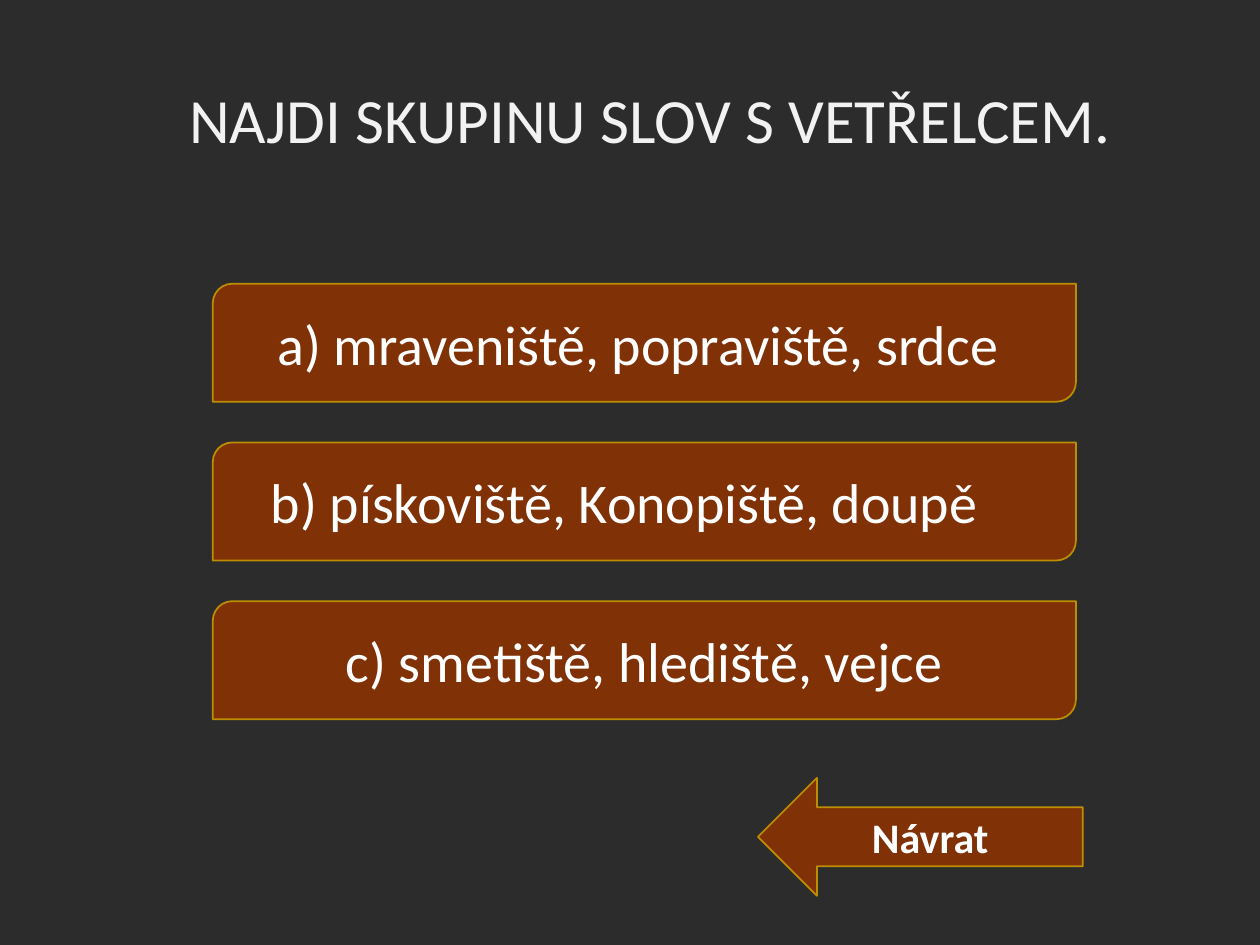
from pptx import Presentation
from pptx.dml.color import RGBColor
from pptx.enum.shapes import MSO_SHAPE
from pptx.enum.text import MSO_ANCHOR, PP_ALIGN
from pptx.util import Cm, Pt

CARD = MSO_SHAPE.ROUND_2_DIAG_RECTANGLE
ARROW = MSO_SHAPE.LEFT_ARROW
MIDDLE = MSO_ANCHOR.MIDDLE
CENTER = PP_ALIGN.CENTER

FONT = "Calibri"
COLORS = {
    "background": "2C2C2C",
    "title": "F2F2F2",
    "fill": "803106",
    "line": "BD8E00",
    "text": "FFFFFF",
}

TITLE = "NAJDI SKUPINU SLOV S VETŘELCEM."
ANSWERS = [
    ("a) mraveniště, popraviště, srdce", 0.5),
    ("b) pískoviště, Konopiště, doupě", 1.05),
    ("c) smetiště, hlediště, vejce", 0.25),
]
BACK = ("Návrat", 0.45)

CARD_LEFT, CARD_TOP, CARD_WIDTH = 4.29, 5.72, 17.4
CARD_STEP = 3.2
SHAPE_HEIGHT = 2.38


def color(name):
    return RGBColor.from_string(COLORS[name])


def set_text(s, text, size, color_name, bold=False):
    tf = s.text_frame
    tf.text = text
    tf.word_wrap = True
    tf.vertical_anchor = MIDDLE
    p = tf.paragraphs[0]
    p.alignment = CENTER
    font = p.runs[0].font
    font.name = FONT
    font.size = Pt(size)
    font.bold = bold
    font.color.rgb = color(color_name)
    return p


def add_button(slide, kind, left, top, width, label, size, bold=False):
    text, right_inset = label
    s = slide.shapes.add_shape(kind, Cm(left), Cm(top), Cm(width), Cm(SHAPE_HEIGHT))
    s.shadow.inherit = False
    s.fill.solid()
    s.fill.fore_color.rgb = color("fill")
    s.line.color.rgb = color("line")
    s.line.width = Pt(1)
    set_text(s, text, size, "text", bold)
    s.text_frame.margin_right = Cm(right_inset)


prs = Presentation()
prs.slide_width, prs.slide_height = Cm(25.4), Cm(19.05)
slide = prs.slides.add_slide(prs.slide_layouts[6])
slide.background.fill.solid()
slide.background.fill.fore_color.rgb = color("background")

title = slide.shapes.add_textbox(Cm(2.69), Cm(0.91), Cm(20.83), Cm(3.18))
set_text(title, TITLE, 36, "title").line_spacing = 0.85

for i, answer in enumerate(ANSWERS):
    add_button(slide, CARD, CARD_LEFT, CARD_TOP + i * CARD_STEP, CARD_WIDTH, answer, 32)

add_button(slide, ARROW, 15.28, 15.68, 6.55, BACK, 24, bold=True)

prs.save("out.pptx")
